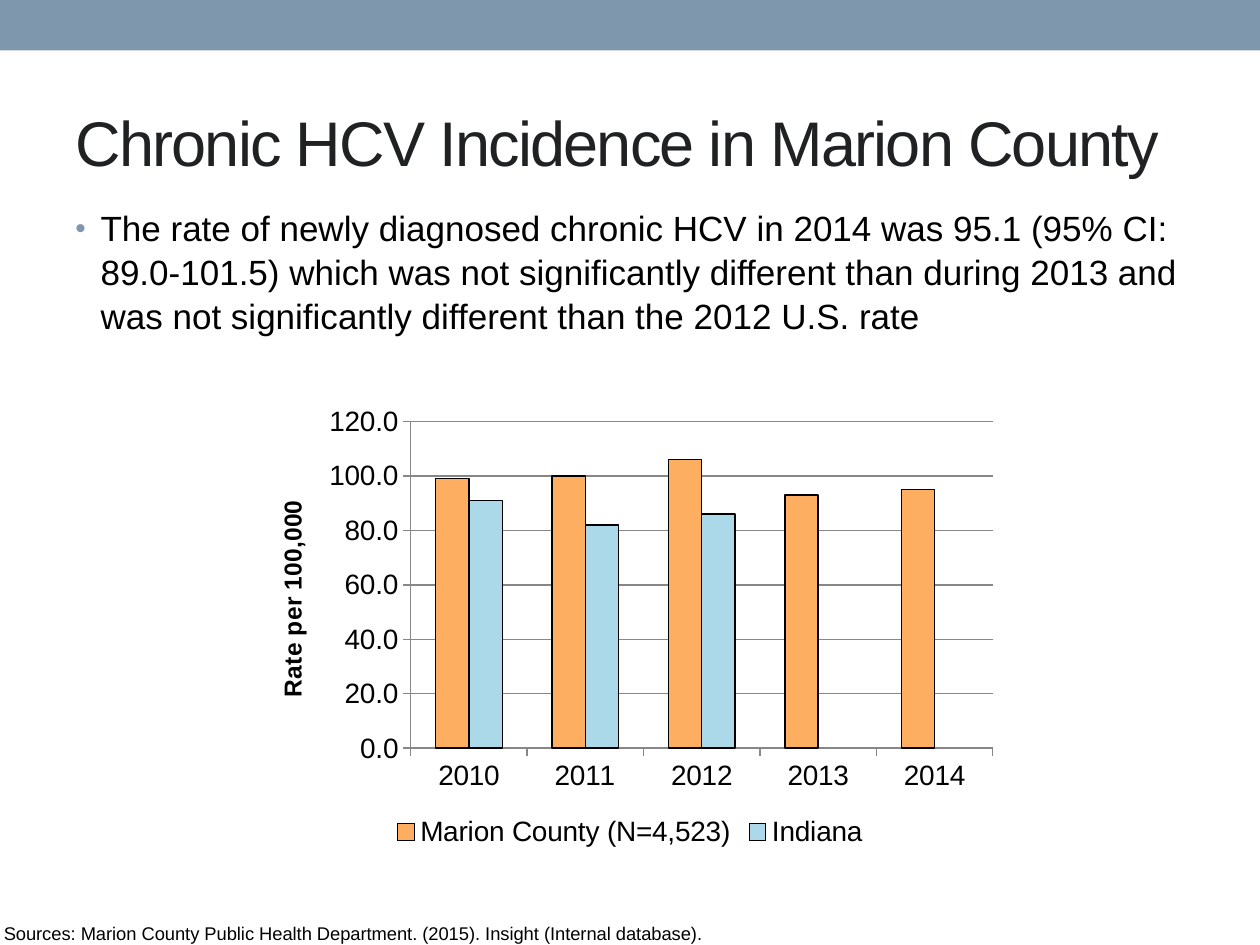
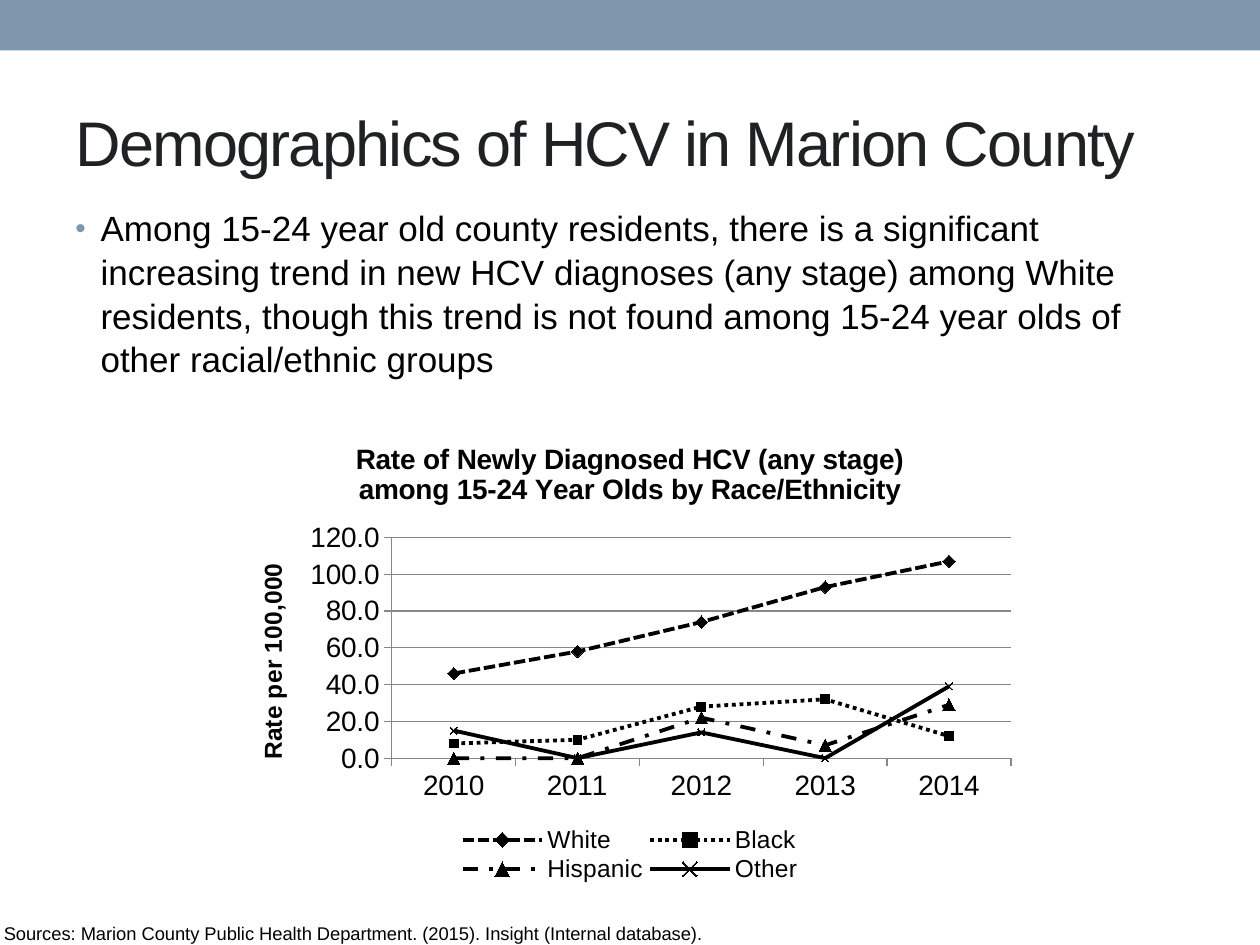
from lxml import etree
from pptx import Presentation
from pptx.chart.data import CategoryChartData
from pptx.dml.color import RGBColor
from pptx.enum import chart as charts, dml, shapes, text
from pptx.oxml import parse_xml
from pptx.oxml.ns import nsdecls, qn
from pptx.util import Pt

rgb = RGBColor.from_string
FONT = "Arial"
BLACK, INK, STEEL, GREY = "000000", "1F2123", "7E97AD", "878787"
YEARS = ["2010", "2011", "2012", "2013", "2014"]
SOURCES = "Sources: Marion County Public Health Department. (2015). Insight (Internal database)."
DASH, MARK = dml.MSO_LINE, charts.XL_MARKER_STYLE


def add_text(slide, wording, box, size, color=BLACK, inset=(7.2, 3.6)):
    frame = slide.shapes.add_textbox(*map(Pt, box)).text_frame
    frame.word_wrap = True
    frame.margin_left = frame.margin_right = Pt(inset[0])
    frame.margin_top = frame.margin_bottom = Pt(inset[1])
    frame.text = wording
    font = frame.paragraphs[0].runs[0].font
    font.name, font.size, font.color.rgb = FONT, Pt(size), rgb(color)
    return frame


def make_layout(x, y, w, h, target=""):
    return parse_xml(
        f'<c:layout {nsdecls("c")}><c:manualLayout>{target}'
        '<c:xMode val="edge"/><c:yMode val="edge"/>'
        f'<c:x val="{x}"/><c:y val="{y}"/><c:w val="{w}"/><c:h val="{h}"/>'
        '</c:manualLayout></c:layout>')


pages = [
    {
        "title": "Chronic HCV Incidence in Marion County",
        "finding": "The rate of newly diagnosed chronic HCV in 2014 was 95.1 (95% CI: "
                   "89.0-101.5) which was not significantly different than during 2013 and "
                   "was not significantly different than the 2012 U.S. rate",
        "finding_height": 78,
        "kind": charts.XL_CHART_TYPE.COLUMN_CLUSTERED,
        "chart_box": (144, 228, 432, 259.2),
        "chart_title": None,
        "plot": (0.21, 0.05, 0.77, 0.72),
        "legend": None,
        "legend_size": 16,
        "rates": [
            ("Marion County (N=4,523)", [99, 100, 106, 93, 95], "FDAE61"),
            ("Indiana", [91, 82, 86, None, None], "ABD9E9"),
        ],
    },
    {
        "title": "Demographics of HCV in Marion County",
        "finding": "Among 15-24 year old county residents, there is a significant "
                   "increasing trend in new HCV diagnoses (any stage) among White "
                   "residents, though this trend is not found among 15-24 year olds of "
                   "other racial/ethnic groups",
        "finding_height": 126,
        "kind": charts.XL_CHART_TYPE.LINE_MARKERS,
        "chart_box": (133.2, 240, 453.6, 268.5),
        "chart_title": "Rate of Newly Diagnosed HCV (any stage) among 15-24 Year Olds by Race/Ethnicity",
        "plot": (0.2, 0.25, 0.78, 0.47),
        "legend": (0.28, 0.86, 0.44, 0.13),
        "legend_size": 14,
        "rates": [
            ("White", [46, 58, 74, 93, 107], (DASH.SQUARE_DOT, MARK.DIAMOND, 7)),
            ("Black", [8, 10, 28, 32, 12], (DASH.ROUND_DOT, MARK.SQUARE, 5)),
            ("Hispanic", [0, 0, 22, 7, 29], (DASH.DASH_DOT, MARK.TRIANGLE, 7)),
            ("Other", [15, 0, 14, 0, 39], (DASH.SOLID, MARK.X, 4)),
        ],
    },
]
dash_names = {DASH.SQUARE_DOT: "sysDash", DASH.ROUND_DOT: "sysDot"}

deck = Presentation()
deck.slide_width, deck.slide_height = Pt(720), Pt(540)

for page in pages:
    slide = deck.slides.add_slide(deck.slide_layouts[6])

    band = slide.shapes.add_shape(shapes.MSO_SHAPE.RECTANGLE, 0, 0, Pt(720), Pt(28.8))
    band.shadow.inherit = False
    band.fill.solid()
    band.fill.fore_color.rgb = rgb(STEEL)
    band.line.fill.background()

    title = add_text(slide, page["title"], (36, 41.76, 653.76, 77.76), 36, INK)
    title.vertical_anchor = text.MSO_ANCHOR.MIDDLE
    title.paragraphs[0].runs[0].font._element.set("spc", "-100")

    finding = add_text(slide, page["finding"], (36, 113.76, 648, page["finding_height"]), 20)
    bullet = finding.paragraphs[0]
    bullet.line_spacing = 1.04
    bullet.space_before, bullet.space_after = Pt(4), Pt(6)
    props = bullet._p.get_or_add_pPr()
    props.set("marL", str(Pt(14.4)))
    props.set("indent", str(Pt(-14.4)))
    color = etree.SubElement(props, qn("a:buClr"))
    etree.SubElement(color, qn("a:srgbClr"), val=STEEL)
    etree.SubElement(props, qn("a:buSzPct"), val="85000")
    etree.SubElement(props, qn("a:buFont"), typeface=FONT)
    etree.SubElement(props, qn("a:buChar"), char="•")

    data = CategoryChartData(number_format="#,##0.0")
    data.categories = YEARS
    for name, values, look in page["rates"]:
        data.add_series(name, values)
    chart = slide.shapes.add_chart(page["kind"], *map(Pt, page["chart_box"]), data).chart
    chart.font.name, chart.font.size = FONT, Pt(16)
    chart.font.color.rgb = rgb(BLACK)

    chart.has_title = bool(page["chart_title"])
    headings = []
    if chart.has_title:
        headings.append((chart.chart_title.text_frame, page["chart_title"], 16))
    years, rates = chart.category_axis, chart.value_axis
    headings.append((rates.axis_title.text_frame, "Rate per 100,000", 14))
    for frame, wording, size in headings:
        frame.text = wording
        font = frame.paragraphs[0].runs[0].font
        font.name, font.size, font.bold = FONT, Pt(size), True
        font.color.rgb = rgb(BLACK)
    for body in chart.element.xpath(".//c:valAx/c:title//a:bodyPr"):
        body.set("rot", "-5400000")
        body.set("vert", "horz")

    rates.minimum_scale, rates.maximum_scale, rates.major_unit = 0, 120, 20
    rates.tick_labels.number_format = "#,##0.0"
    rates.tick_labels.number_format_is_linked = False
    rates.has_major_gridlines = True
    for axis in (years, rates):
        axis.major_tick_mark = charts.XL_TICK_MARK.OUTSIDE
        axis.minor_tick_mark = charts.XL_TICK_MARK.NONE
    for line in (years.format.line, rates.format.line, rates.major_gridlines.format.line):
        line.color.rgb, line.width = rgb(GREY), Pt(0.75)

    chart.has_legend = True
    legend = chart.legend
    legend.position = charts.XL_LEGEND_POSITION.BOTTOM
    legend.include_in_layout = False
    legend.font.name, legend.font.size = FONT, Pt(page["legend_size"])
    legend.font.color.rgb = rgb(BLACK)

    for old in chart.element.xpath(".//c:plotArea/c:layout | .//c:legend/c:layout"):
        old.getparent().remove(old)
    chart.element.xpath(".//c:plotArea")[0].insert(
        0, make_layout(*page["plot"], '<c:layoutTarget val="inner"/>'))
    if page["legend"]:
        chart.element.xpath(".//c:legendPos")[0].addnext(make_layout(*page["legend"]))

    plot = chart.plots[0]
    plot.vary_by_categories = False
    columns = page["kind"] == charts.XL_CHART_TYPE.COLUMN_CLUSTERED
    if columns:
        plot.gap_width, plot.overlap = 150, 0
    for series, (name, values, look) in zip(plot.series, page["rates"]):
        outline = series.format.line
        outline.color.rgb = rgb(BLACK)
        if columns:
            outline.width = Pt(0.75)
            series.format.fill.solid()
            series.format.fill.fore_color.rgb = rgb(look)
            continue
        dash, mark, size = look
        outline.width, outline.dash_style = Pt(2.19), dash
        for preset in series._element.xpath("./c:spPr/a:ln/a:prstDash"):
            preset.set("val", dash_names.get(dash, preset.get("val")))
        series.smooth = False
        series.marker.style, series.marker.size = mark, size
        series.marker.format.fill.solid()
        series.marker.format.fill.fore_color.rgb = rgb(BLACK)
        series.marker.format.line.color.rgb = rgb(BLACK)

    add_text(slide, SOURCES, (2.16, 527.04, 712.08, 12.96), 10.5, inset=(0, 0))

deck.save("out.pptx")
